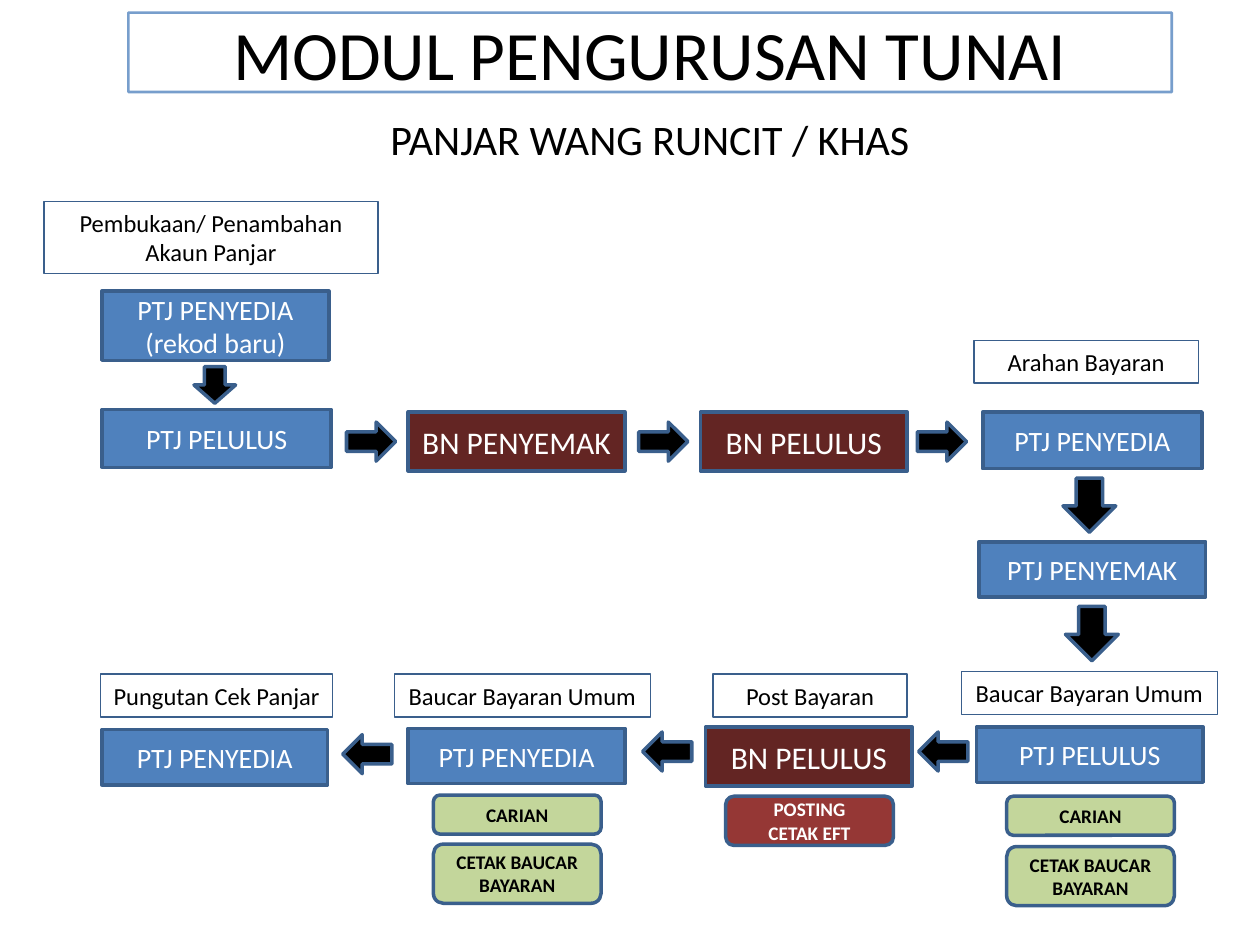
from lxml.etree import SubElement
from pptx import Presentation
from pptx.dml.color import RGBColor
from pptx.enum.shapes import MSO_SHAPE as Shape
from pptx.enum.text import MSO_ANCHOR as Anchor, PP_ALIGN as Align
from pptx.oxml.ns import qn
from pptx.util import Pt
from dataclasses import dataclass


@dataclass(frozen=True)
class Theme:
    font: str = "Calibri"
    black: str = "000000"
    white: str = "FFFFFF"
    blue: str = "4F81BD"
    border: str = "3A5F8C"
    maroon: str = "632523"
    red: str = "953735"
    green: str = "C3D69B"
    title: float = 39.6
    subtitle: float = 24
    treasury: float = 18
    department: float = 16
    label: float = 14
    action: float = 11


THEME = Theme()

TITLE = ("MODUL PENGURUSAN TUNAI", (73.4, 7.2, 596.2, 45.4))
SUBTITLE = ("PANJAR WANG RUNCIT / KHAS", (216, 61.2, 334.1, 36))

STYLES = {
    "department": (Shape.RECTANGLE, THEME.blue, THEME.white, THEME.department, False, 2),
    "treasury": (Shape.RECTANGLE, THEME.maroon, THEME.white, THEME.treasury, False, 2),
    "label": (Shape.RECTANGLE, None, THEME.black, THEME.label, False, 0.75),
    "print": (Shape.ROUNDED_RECTANGLE, THEME.green, THEME.black, THEME.action, True, 2),
    "posting": (Shape.ROUNDED_RECTANGLE, THEME.red, THEME.white, THEME.action, True, 2),
}

BOXES = {
    "department": [
        ("PTJ PENYEDIA\n(rekod baru)", 58.3, 166.3, 129.6, 39.6),
        ("PTJ PELULUS", 58.3, 234, 131, 33.1),
        ("PTJ PENYEDIA", 561.6, 235.4, 125.3, 32.4),
        ("PTJ PENYEMAK", 559.4, 309.6, 129.6, 31.7),
        ("PTJ PELULUS", 558, 415.4, 129.6, 31.7),
        ("PTJ PENYEDIA", 233.3, 416.2, 123.8, 31.7),
        ("PTJ PENYEDIA", 58.3, 416.9, 128.9, 31.7),
    ],
    "treasury": [
        ("BN PENYEMAK", 233.3, 235.4, 123.8, 33.8),
        ("BN PELULUS", 400.3, 235.4, 118.1, 33.8),
        ("BN PELULUS", 403.2, 415.4, 118.1, 33.8),
    ],
    "label": [
        ("Pembukaan/ Penambahan Akaun Panjar", 25.2, 115.2, 190.8, 41),
        ("Arahan Bayaran", 556.6, 194.4, 128.2, 24.5),
        ("Baucar Bayaran Umum", 549.4, 383.8, 146.2, 24.5),
        ("Post Bayaran", 407.5, 385.2, 110.9, 24.5),
        ("Baucar Bayaran Umum", 225.4, 385.2, 146.2, 24.5),
        ("Pungutan Cek Panjar", 57.6, 385.2, 132.5, 24.5),
    ],
    "print": [
        ("CARIAN", 575.3, 455, 95.8, 22.3),
        ("CETAK BAUCAR BAYARAN", 575.3, 483.8, 95.8, 33.8),
        ("CARIAN", 247.7, 454.3, 95.8, 22.3),
        ("CETAK BAUCAR BAYARAN", 247.7, 482.4, 95.8, 33.8),
    ],
    "posting": [("POSTING\nCETAK EFT", 414.7, 455, 95.8, 28.1)],
}

ARROWS = {
    "right": (0, 28.1, 22.3, [(198, 241.2), (365, 241.2), (524.2, 241.2)]),
    "left": (180, 28.1, 22.3, [(524.9, 418.3), (367.2, 418.3), (195.8, 419.8)]),
    "down": (90, 31, 30.2, [(607, 273.6), (608.4, 347)]),
    "short down": (90, 20.9, 23.8, [(112.3, 208.1)]),
}


def color(value):
    return RGBColor.from_string(value)


def write(box, text, size, ink, bold=False, align=Align.CENTER, anchor=Anchor.MIDDLE):
    frame = box.text_frame
    frame.text = text
    frame.word_wrap = True
    frame.vertical_anchor = anchor
    for para in frame.paragraphs:
        para.alignment = align
        para.font.name = THEME.font
        para.font.size = Pt(size)
        para.font.bold = bold
        para.font.color.rgb = color(ink)


def add_box(slide, kind, place, fill, line_width):
    box = slide.shapes.add_shape(kind, *map(Pt, place))
    box.shadow.inherit = False
    if fill:
        box.fill.solid()
        box.fill.fore_color.rgb = color(fill)
    else:
        box.fill.background()
    box.line.color.rgb = color(THEME.border)
    box.line.width = Pt(line_width)
    return box


def add_title(slide):
    text, place = TITLE
    title = slide.shapes.title
    title.left, title.top, title.width, title.height = map(Pt, place)
    write(title, text, THEME.title, THEME.black)
    title.line.color.rgb = color(THEME.blue)
    title.line.width = Pt(1.5)
    tint = next(title.line.fill._xPr.iter(qn("a:srgbClr")))
    SubElement(tint, qn("a:alpha"), val="76000")


def main():
    deck = Presentation()
    deck.slide_width, deck.slide_height = Pt(720), Pt(540)
    slide = deck.slides.add_slide(deck.slide_layouts[5])
    add_title(slide)

    text, place = SUBTITLE
    subtitle = slide.shapes.add_textbox(*map(Pt, place))
    write(subtitle, text, THEME.subtitle, THEME.black, align=Align.LEFT, anchor=Anchor.TOP)

    for role, boxes in BOXES.items():
        kind, fill, ink, size, bold, line_width = STYLES[role]
        for text, *place in boxes:
            box = add_box(slide, kind, place, fill, line_width)
            write(box, text, size, ink, bold)
            box.text_frame.margin_left = box.text_frame.margin_right = Pt(5)

    for rotation, width, height, corners in ARROWS.values():
        for left, top in corners:
            arrow = add_box(slide, Shape.RIGHT_ARROW, (left, top, width, height), THEME.black, 2)
            arrow.rotation = rotation

    deck.save("out.pptx")


if __name__ == "__main__":
    main()
